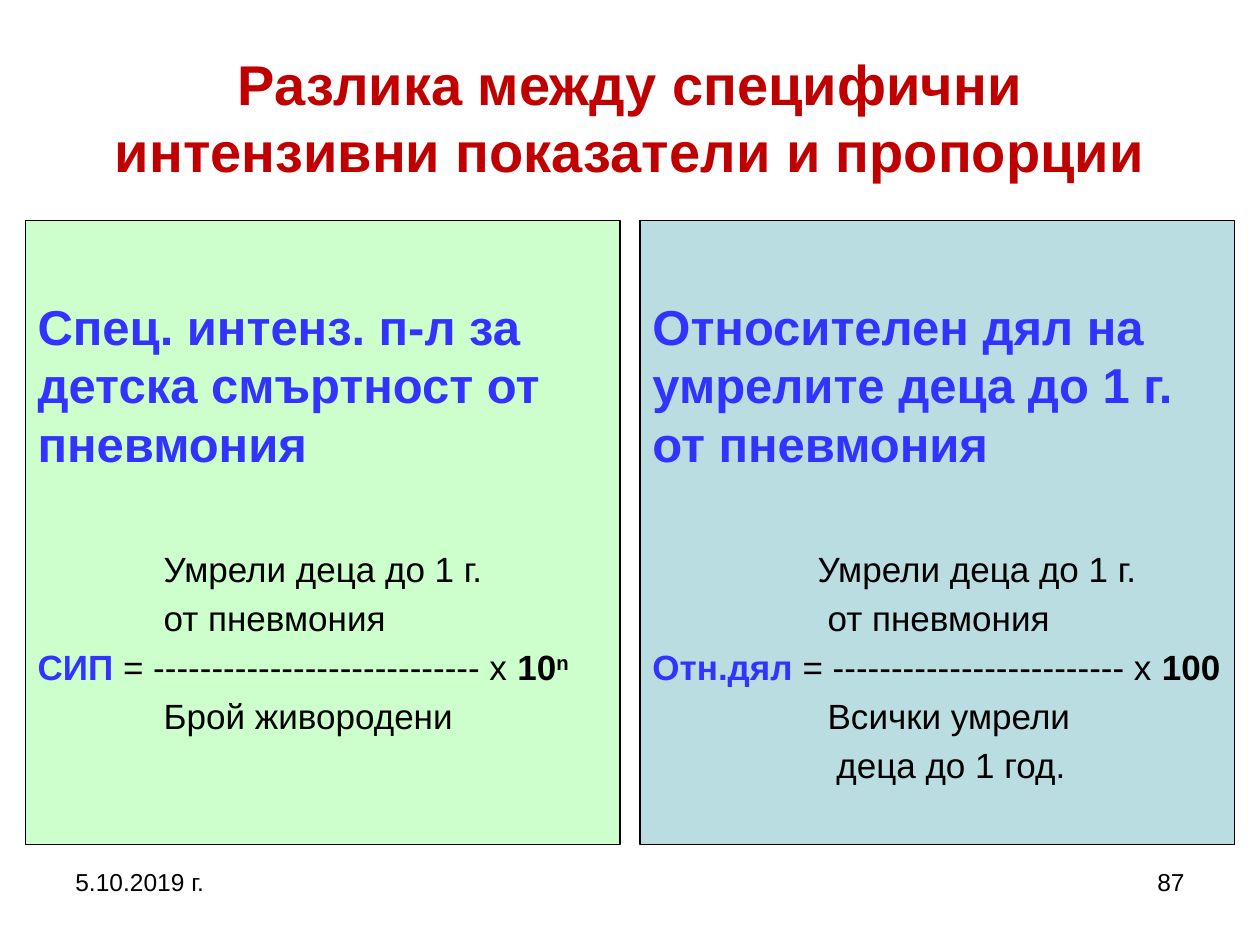
from pptx import Presentation
from pptx.dml.color import RGBColor
from pptx.enum.shapes import MSO_SHAPE
from pptx.enum.text import MSO_ANCHOR, PP_ALIGN
from pptx.util import Pt

SCALE = 9144
FONT = "Arial"
COLORS = {
    "title": "C00000",
    "accent": "3333FF",
    "text": "000000",
    "green": "CCFFCC",
    "blue": "BADDE1",
}


def px(length):
    return length * SCALE


def color(name):
    return RGBColor.from_string(COLORS[name])


def place(shape, box):
    shape.left, shape.top, shape.width, shape.height = map(px, box)


def write(paragraph, runs, size=20, align=PP_ALIGN.LEFT, before=0, indent=0):
    paragraph.alignment = align
    paragraph.space_before = Pt(before)
    paragraph.line_spacing = Pt(size * 1.2)
    properties = paragraph._p.get_or_add_pPr()
    properties.set("marL", str(px(indent)))
    properties.set("indent", "0")
    for text, tone, bold, baseline in runs:
        run = paragraph.add_run()
        run.text = text
        run.font.name = FONT
        run.font.size = Pt(size)
        run.font.bold = bold
        run.font.color.rgb = color(tone)
        if baseline:
            run._r.get_or_add_rPr().set("baseline", str(baseline * 1000))


def plain(text):
    return [(text, "text", False, 0)]


def add_title(slide, box, text):
    title = slide.shapes.title
    place(title, box)
    title.text_frame.vertical_anchor = MSO_ANCHOR.MIDDLE
    write(title.text_frame.paragraphs[0], [(text, "title", True, 0)],
          size=32, align=PP_ALIGN.CENTER)


def add_panel(slide, box, fill, heading, formula):
    panel = slide.shapes.add_shape(MSO_SHAPE.RECTANGLE, *map(px, box))
    panel.shadow.inherit = False
    panel.fill.solid()
    panel.fill.fore_color.rgb = color(fill)
    panel.line.color.rgb = color("text")
    panel.line.width = Pt(0.75)
    frame = panel.text_frame
    frame.word_wrap = True
    frame.vertical_anchor = MSO_ANCHOR.TOP
    frame.margin_left = frame.margin_right = px(10)
    frame.margin_top = px(60)
    write(frame.paragraphs[0], [(heading, "accent", True, 0)], size=28)
    for index, (indent, runs) in enumerate(formula):
        write(frame.add_paragraph(), runs, indent=indent,
              before=4 if index else 43)


def add_footer(slide, box, text, align):
    footer = slide.shapes.add_textbox(*map(px, box))
    footer.text_frame.word_wrap = True
    write(footer.text_frame.paragraphs[0], plain(text), size=14, align=align)


def main():
    presentation = Presentation()
    presentation.slide_width = px(1000)
    presentation.slide_height = px(750)
    slide = presentation.slides.add_slide(presentation.slide_layouts[5])

    add_title(slide, (50, 30, 900, 125),
              "Разлика между специфични интензивни показатели и пропорции")

    rate = [
        (100, plain("Умрели деца до 1 г.")),
        (100, plain("от пневмония")),
        (0, [("СИП", "accent", True, 0),
             (" = ---------------------------- х", "text", False, 0),
             (" 10", "text", True, 0),
             ("n", "text", True, 30)]),
        (100, plain("Брой живородени")),
    ]
    share = [
        (131, plain("Умрели деца до 1 г.")),
        (139, plain("от пневмония")),
        (0, [("Отн.дял", "accent", True, 0),
             (" = ------------------------- х ", "text", False, 0),
             ("100", "text", True, 0)]),
        (139, plain("Всички умрели")),
        (146, plain("деца до 1 год.")),
    ]
    panels = [
        ("green", "Спец. интенз. п-л за детска смъртност от пневмония", rate),
        ("blue", "Относителен дял на умрелите деца до 1 г. от пневмония", share),
    ]
    width, gap = 472, 16
    for index, (fill, heading, formula) in enumerate(panels):
        box = (20 + index * (width + gap), 175, width, 495)
        add_panel(slide, box, fill, heading, formula)

    add_footer(slide, (50, 683, 233, 52), "5.10.2019 г.", PP_ALIGN.LEFT)
    add_footer(slide, (717, 683, 233, 52), "87", PP_ALIGN.RIGHT)
    presentation.save("out.pptx")


if __name__ == "__main__":
    main()
